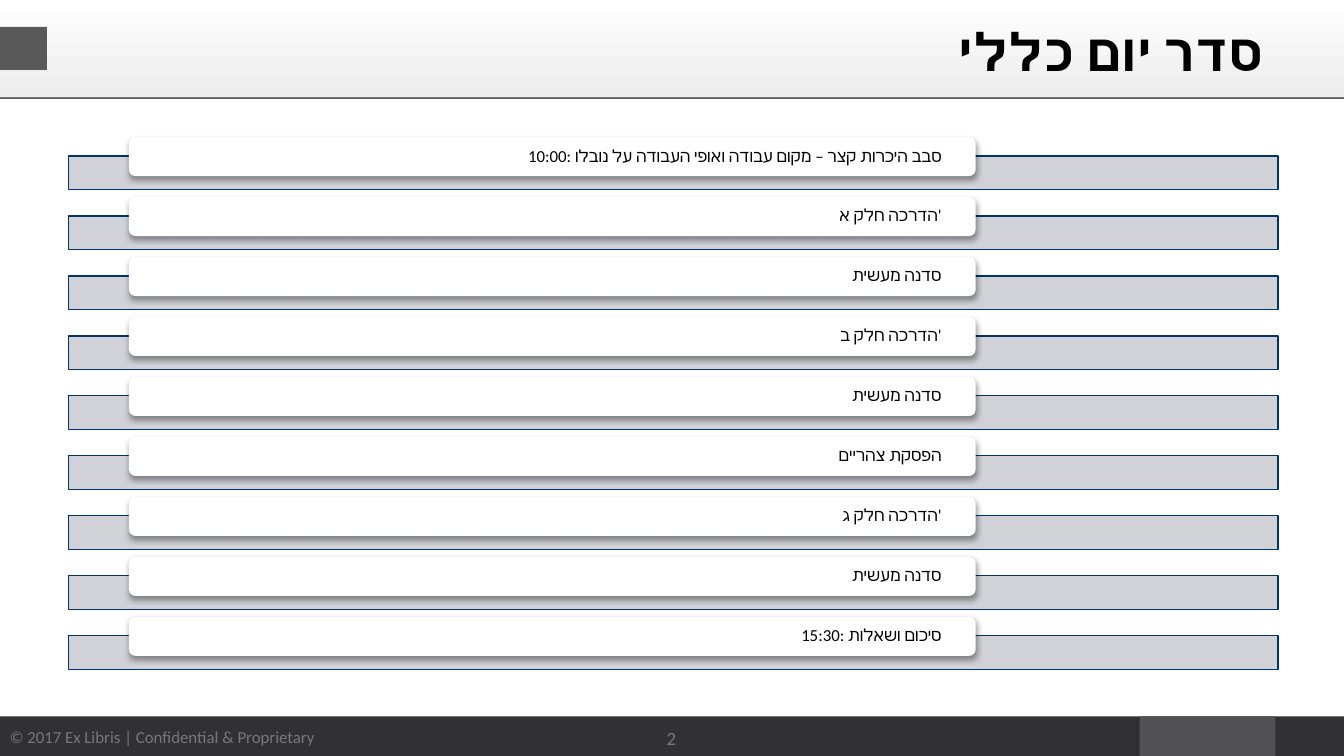
from dataclasses import dataclass
from lxml import etree
from pptx import Presentation
from pptx import util as u
from pptx.dml import color
from pptx.enum import shapes, text
from pptx.oxml import ns


@dataclass(frozen=True)
class Theme:
    font: str = "Calibri"
    ink: str = "000000"
    dim: str = "787878"
    white: str = "FFFFFF"
    foot: str = "313133"
    patch: str = "525254"
    tab: str = "595959"
    bar: str = "CCCED3"
    edge: str = "003466"
    head: tuple = ("FFFFFF", "ECECEC")
    rule: tuple = ("A0A0A0", "5A5A5A")
    title: int = 28
    page: int = 10
    body: int = 9


def box(kind, at, fill):
    shape = slide.shapes.add_shape(kind, *map(u.Inches, at))
    shape.shadow.inherit = False
    shape.line.fill.background()
    if isinstance(fill, tuple):
        shape.fill.gradient()
        shape.fill.gradient_angle = 270
        for stop, tone in zip(shape.fill.gradient_stops, fill):
            stop.color.rgb = color.RGBColor.from_string(tone)
    else:
        shape.fill.solid()
        shape.fill.fore_color.rgb = color.RGBColor.from_string(fill)
    return shape


def write(shape, words, size, tone, side, bold=False):
    frame = shape.text_frame
    frame.vertical_anchor = text.MSO_ANCHOR.MIDDLE
    para = frame.paragraphs[0]
    para.alignment = side
    run = para.add_run()
    run.text = words
    run.font.name = theme.font
    run.font.size = u.Pt(size)
    run.font.bold = bold
    run.font.color.rgb = color.RGBColor.from_string(tone)
    etree.SubElement(run.font._element, ns.qn("a:cs"), typeface=theme.font)
    return para


theme = Theme()
rect = shapes.MSO_SHAPE.RECTANGLE
right = text.PP_ALIGN.RIGHT
center = text.PP_ALIGN.CENTER

deck = Presentation()
deck.slide_width = u.Inches(10)
deck.slide_height = u.Inches(10) * 9 // 16
slide = deck.slides.add_slide(deck.slide_layouts[6])

for at, fill in (
    ((0, 5.33, 10, 0.32), theme.foot),
    ((8.48, 5.33, 1.01, 0.32), theme.patch),
    ((-0.01, 0.01, 10.01, 0.72), theme.head),
    ((0, 0.2, 0.35, 0.32), theme.tab),
    ((0, 0.72, 10, 0.01), theme.rule),
):
    box(rect, at, fill)

note = slide.shapes.add_textbox(*map(u.Inches, (-0.04, 5.36, 2.49, 0.25)))
note.text_frame.word_wrap = False
write(note, "© 2017 Ex Libris | Confidential & Proprietary", theme.body, theme.dim, center)

page = slide.shapes.add_textbox(*map(u.Inches, (4.7, 5.29, 0.59, 0.4)))
page.text_frame.word_wrap = True
write(page, "2", theme.page, theme.dim, center)

title = slide.shapes.add_textbox(*map(u.Inches, (0.5, 0.06, 9, 0.63)))
title.text_frame.word_wrap = True
para = write(title, "סדר יום כללי", theme.title, theme.ink, right, True)
para._p.get_or_add_pPr().set("rtl", "1")

items = (
    "10:00: סבב היכרות קצר – מקום עבודה ואופי העבודה על נובלו",
    "הדרכה חלק א'",
    "סדנה מעשית",
    "הדרכה חלק ב'",
    "סדנה מעשית",
    "הפסקת צהריים",
    "הדרכה חלק ג'",
    "סדנה מעשית",
    "15:30: סיכום ושאלות",
)
first, last = 1.02, 4.59
step = (last - first) / (len(items) - 1)

for row, words in enumerate(items):
    top = first + row * step

    bar = box(rect, (0.51, top + 0.14, 9, 0.25), theme.bar)
    bar.line.color.rgb = color.RGBColor.from_string(theme.edge)
    bar.line.width = u.Pt(0.75)
    tint = bar._element.spPr.find(ns.qn("a:solidFill"))[0]
    etree.SubElement(tint, ns.qn("a:alpha"), val="90000")

    card = box(shapes.MSO_SHAPE.ROUNDED_RECTANGLE, (0.96, top, 6.3, 0.29), theme.white)
    glow = etree.SubElement(
        card._element.spPr.find(ns.qn("a:effectLst")), ns.qn("a:outerShdw"),
        blurRad=str(u.Pt(3.1)), dist=str(u.Pt(1.6)), dir="5400000", rotWithShape="0")
    shade = etree.SubElement(glow, ns.qn("a:srgbClr"), val=theme.ink)
    etree.SubElement(shade, ns.qn("a:alpha"), val="38000")

    frame = card.text_frame
    frame.word_wrap = True
    frame.margin_left = frame.margin_right = u.Inches(0.24)
    frame.margin_top = frame.margin_bottom = 0
    para = write(card, words, theme.body, theme.ink, right)
    para.line_spacing = 0.9

deck.save("out.pptx")
